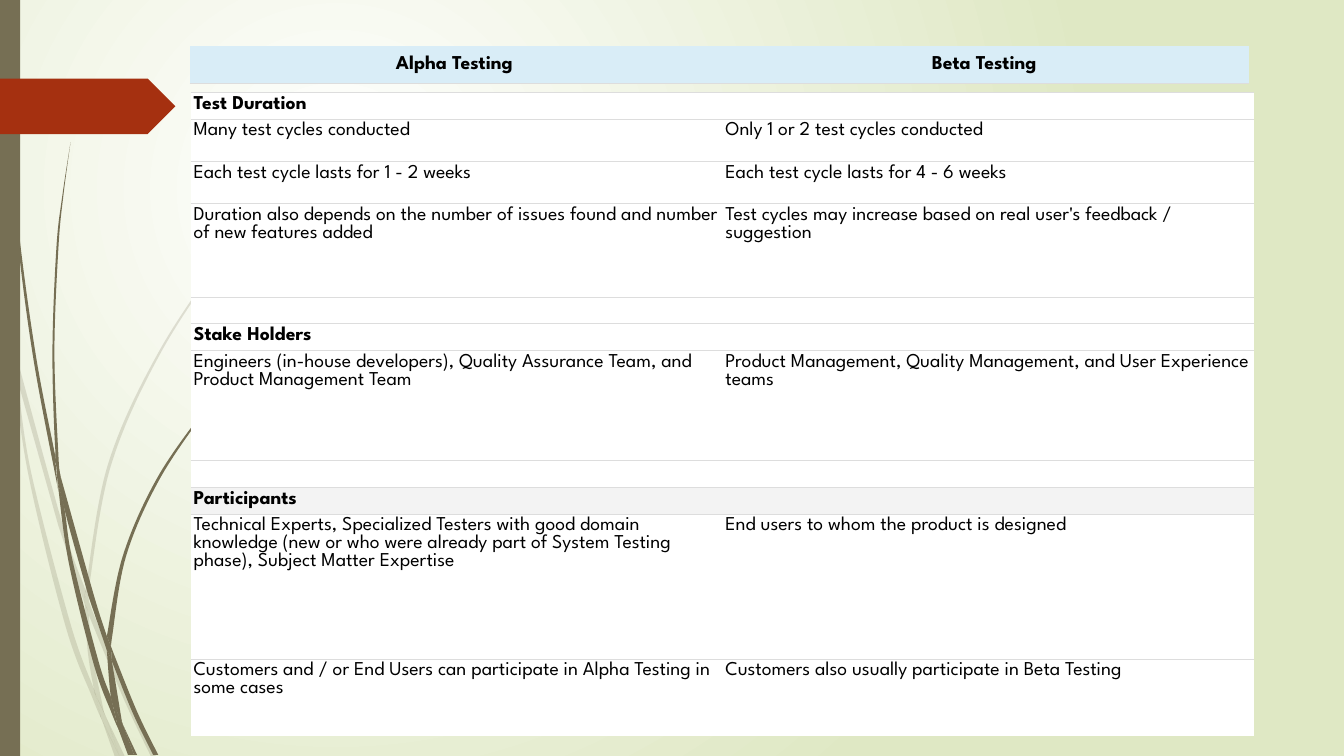
from lxml import etree
from pptx import Presentation
from pptx.dml.color import RGBColor
from pptx.enum import shapes, text
from pptx.oxml.ns import qn
from pptx.util import Cm, Pt

# Content
HEADINGS = ("Alpha Testing", "Beta Testing")
# (alpha text, beta text, row height in inches)
COMPARISON = [
    ("Test Duration", "", 0.26),
    ("Many test cycles conducted", "Only 1 or 2 test cycles conducted", 0.42),
    ("Each test cycle lasts for 1 - 2 weeks", "Each test cycle lasts for 4 - 6 weeks", 0.42),
    ("Duration also depends on the number of issues found and number of new features added",
     "Test cycles may increase based on real user's feedback / suggestion", 0.93),
    ("", "", 0.26),
    ("Stake Holders", "", 0.27),
    ("Engineers (in-house developers), Quality Assurance Team, and Product Management Team",
     "Product Management, Quality Management, and User Experience teams", 1.09),
    ("", "", 0.27),
    ("Participants", "", 0.26),
    ("Technical Experts, Specialized Testers with good domain knowledge (new or who were "
     "already part of System Testing phase), Subject Matter Expertise",
     "End users to whom the product is designed", 1.44),
    ("Customers and / or End Users can participate in Alpha Testing in some cases",
     "Customers also usually participate in Beta Testing", 0.76),
]
SHADED_SECTION = "Participants"
FONT, SIZE = "League Spartan", 14
COLORS = {"stem": "766F54", "arrow": "A53010", "center": "FFFFFF", "edge": "DFE8C4",
          "rule": "DDDDDD", "head": "D9EDF7", "cell": "FFFFFF", "shaded": "F3F3F3",
          "text": "000000"}

# Grass blade parts: the two edges of each, in inches
PALE_BLADES = [
    ([(.11, 3.5), (.09, 3.22), (0, 2.82)], [(0, 2.99), (.1, 3.44), (.11, 3.5)]),
    ([(.58, 5.22), (.84, 5.99)], [(.85, 5.86), (.62, 5.2), (.14, 3.45)],
     [(.17, 3.76), (.58, 5.22)]),
    ([(.92, 6.07), (.88, 5.96)], [(.88, 6.1), (1.23, 6.94), (1.5, 7.51)],
     [(1.55, 7.51), (1.27, 6.92), (.92, 6.07)]),
    ([(1.19, 7.51), (1.24, 7.51)], [(1.05, 7.11), (1.19, 7.51)]),
    ([(.93, 6.83), (.7, 6.19), (.31, 4.69), (.17, 3.76), (.11, 3.5)],
     [(.11, 3.5), (.28, 4.7), (.65, 6.21), (.92, 6.93), (1.01, 7.14)],
     [(1.01, 7.14), (.99, 7.07), (.93, 6.83)]),
    ([(.84, 5.99), (.87, 6.46), (.93, 6.83), (.96, 6.92), (1.05, 7.11)],
     [(1.03, 7.06), (.91, 6.46), (.88, 6.1), (.84, 5.99)]),
    ([(.88, 5.84), (1.1, 4.62), (1.6, 3.49), (2.29, 2.45), (2.68, 1.98), (2.9, 1.75), (3.12, 1.54)],
     [(3.12, 1.53), (2.89, 1.75), (2.68, 1.97), (2.28, 2.44), (1.58, 3.48), (1.07, 4.61),
      (.85, 5.84), (.85, 5.86)], [(.88, 5.96), (.88, 5.84)]),
    ([(1.01, 7.14), (1.14, 7.51)], [(1.19, 7.51), (1.01, 7.14)]),
    ([(.88, 6.08), (.88, 6.1), (.88, 5.96)], [(.85, 5.86), (.84, 5.99)]),
    ([(.96, 6.92), (.93, 6.83)], [(.93, 6.83), (.99, 7.07), (1.01, 7.14), (1.19, 7.51)],
     [(1.19, 7.51), (1.05, 7.11), (.96, 6.92)]),
]
DARK_BLADES = [
    ([(.07, 1.1), (.17, 2.33), (.33, 3.55), (.56, 4.77), (.57, 4.81)],
     [(.55, 4.57), (.55, 4.53), (.36, 3.55), (.19, 2.32), (.08, 1.09), (.05, .48), (.04, 0)],
     [(.03, 0), (.04, .48), (.07, 1.1)]),
    ([(.88, 5.92), (1.06, 6.45)], [(1.06, 6.33), (1.06, 6.31), (.93, 5.9), (.6, 4.72)],
     [(.6, 4.72), (.64, 5.05), (.88, 5.92)]),
    ([(1.13, 6.49), (1.1, 6.41)], [(1.11, 6.56), (1.32, 7.08), (1.52, 7.49)],
     [(1.57, 7.49), (1.36, 7.06), (1.13, 6.49)]),
    ([(1.1, 6.91), (.98, 6.57), (.72, 5.56), (.64, 5.05), (.57, 4.77)],
     [(.57, 4.77), (.68, 5.57), (.93, 6.59), (1.11, 7.08), (1.17, 7.22)],
     [(1.17, 7.22), (1.16, 7.17), (1.1, 6.91)]),
    ([(.6, 4.72), (.58, 4.53), (.54, 3.49), (.58, 2.45), (.63, 1.93), (.7, 1.41)],
     [(.7, 1.41), (.62, 1.93), (.56, 2.45), (.52, 3.49), (.55, 4.49), (.6, 4.72)]),
    ([(1.33, 7.49), (1.36, 7.49)], [(1.22, 7.19), (1.33, 7.49)]),
    ([(.57, 4.77), (.64, 5.05)], [(.6, 4.72), (.55, 4.49)], [(.55, 4.53), (.57, 4.77)]),
    ([(1.11, 6.33), (1.25, 5.52), (1.58, 4.76), (2.05, 4.06), (2.31, 3.74), (2.61, 3.44)],
     [(2.6, 3.44), (2.31, 3.73), (2.04, 4.05), (1.56, 4.74), (1.22, 5.51), (1.06, 6.31)],
     [(1.1, 6.41), (1.11, 6.33)]),
    ([(1.17, 7.22), (1.27, 7.49)], [(1.31, 7.49), (1.17, 7.22)]),
    ([(1.06, 6.45), (1.1, 6.91), (1.16, 7.06), (1.22, 7.19)],
     [(1.21, 7.16), (1.11, 6.56), (1.09, 6.51), (1.06, 6.45)]),
    ([(1.06, 6.45), (1.09, 6.51), (1.11, 6.56)], [(1.1, 6.41), (1.06, 6.31)],
     [(1.06, 6.33), (1.06, 6.45)]),
    ([(1.16, 7.06), (1.1, 6.91)], [(1.16, 7.17), (1.17, 7.22), (1.3, 7.49)],
     [(1.33, 7.49), (1.22, 7.19), (1.16, 7.06)]),
]


def inch(n):
    return Cm(n * 2.54)


def rgb(name):
    return RGBColor.from_string(COLORS[name])


def bezier(edge):
    """Two control points and an end point for each step along the edge."""
    ends = [edge[0], *edge, edge[-1]]
    for a, b, c, d in zip(ends, ends[1:], ends[2:], ends[3:]):
        yield tuple(q + (r - p) / 6 for p, q, r in zip(a, b, c))
        yield tuple(r - (v - q) / 6 for q, r, v in zip(b, c, d))
        yield c


def paint(sp, color, alpha=None):
    sp.shadow.inherit = False
    sp.fill.solid()
    sp.fill.fore_color.rgb = rgb(color)
    sp.line.fill.background()
    if alpha:
        clr = sp._element.spPr.find(".//" + qn("a:srgbClr"))
        etree.SubElement(clr, qn("a:alpha"), val=str(alpha * 1000))


def add_blade(s, edges, alpha=None):
    outline = [edges[0][0]]
    for edge in edges:
        if edge[0] != outline[-1]:
            outline += [outline[-1], edge[0], edge[0]]
        outline += bezier(edge)
    outline = [(inch(x), inch(y)) for x, y in outline]
    fb = s.shapes.build_freeform(*outline[0])
    fb.add_line_segments(outline[1:], close=True)
    sp = fb.convert_to_shape()
    # Turn each three line steps into one curve
    steps = list(sp._element.iter(qn("a:lnTo")))
    for group in zip(steps[::3], steps[1::3], steps[2::3]):
        curve = etree.Element(qn("a:cubicBezTo"))
        group[0].addprevious(curve)
        for step in group:
            curve.append(step[0])
            step.getparent().remove(step)
    paint(sp, "stem", alpha)


def write(tf, content, bold=False, align=text.PP_ALIGN.LEFT):
    p = tf.paragraphs[0]
    p.alignment = align
    if not content:
        end = etree.SubElement(p._p, qn("a:endParaRPr"), sz=str(SIZE * 100))
        etree.SubElement(end, qn("a:latin"), typeface=FONT)
        return
    r = p.add_run()
    r.text = content
    r.font.name, r.font.size, r.font.bold = FONT, Pt(SIZE), bold
    r.font.color.rgb = rgb("text")


def format_cell(cell, fill, inset, rules):
    cell.margin_left = cell.margin_right = inch(0.03)
    cell.margin_top = cell.margin_bottom = inch(inset)
    cell.fill.solid()
    cell.fill.fore_color.rgb = rgb(fill)
    tcPr = cell._tc.get_or_add_tcPr()
    for i, side in enumerate(("lnL", "lnR", "lnT", "lnB")):
        ln = etree.Element(qn("a:" + side), w=str(Pt(0.6)))
        if side in rules:
            solid = etree.SubElement(ln, qn("a:solidFill"))
            etree.SubElement(solid, qn("a:srgbClr"), val=COLORS["rule"])
        else:
            etree.SubElement(ln, qn("a:noFill"))
        tcPr.insert(i, ln)


def add_grid(s, left, top, width, heights):
    table = s.shapes.add_table(len(heights), 2, inch(left), inch(top),
                               inch(width), inch(sum(heights))).table
    table.first_row = table.horz_banding = False
    for row, height in zip(table.rows, heights):
        row.height = inch(height)
    return table


prs = Presentation()
prs.slide_width, prs.slide_height = inch(13.33), inch(7.5)
s = prs.slides.add_slide(prs.slide_layouts[6])

# Radial background
bg = s.background.fill
bg.gradient()
for stop, name in zip(bg.gradient_stops, ("center", "edge")):
    stop.color.rgb = rgb(name)
grad = s._element.find(".//" + qn("a:gradFill"))
grad.remove(grad.find(qn("a:lin")))
circle = etree.SubElement(grad, qn("a:path"), {"path": "circle"})
etree.SubElement(circle, qn("a:fillToRect"), l="50000", t="50000", r="100000", b="100000")

# Grass, side bar and arrow
for blades, alpha in ((PALE_BLADES, 20), (DARK_BLADES, None)):
    for edges in blades:
        add_blade(s, edges, alpha)
bar = s.shapes.add_shape(shapes.MSO_SHAPE.RECTANGLE, 0, 0, inch(0.2), prs.slide_height)
paint(bar, "stem")
arrow = s.shapes.add_shape(shapes.MSO_SHAPE.PENTAGON, 0, inch(0.78), inch(1.74), inch(0.55))
paint(arrow, "arrow")

# Comparison table
table = add_grid(s, 1.89, 0.92, 10.55, [row[2] for row in COMPARISON])
for i, (alpha_text, beta_text, _) in enumerate(COMPARISON):
    is_section = bool(alpha_text) and not beta_text
    fill = "shaded" if alpha_text == SHADED_SECTION else "cell"
    rules = ("lnT",) if i == len(COMPARISON) - 1 else ("lnT", "lnB")
    for j, content in enumerate((alpha_text, beta_text)):
        cell = table.cell(i, j)
        format_cell(cell, fill, 0.03, rules)
        write(cell.text_frame, content, bold=is_section)

# Heading table
table = add_grid(s, 1.88, 0.46, 10.51, [0.37])
for j, heading in enumerate(HEADINGS):
    cell = table.cell(0, j)
    format_cell(cell, "head", 0.03, ("lnB",))
    cell.vertical_anchor = text.MSO_ANCHOR.MIDDLE
    write(cell.text_frame, heading, bold=True, align=text.PP_ALIGN.CENTER)

prs.save("out.pptx")
